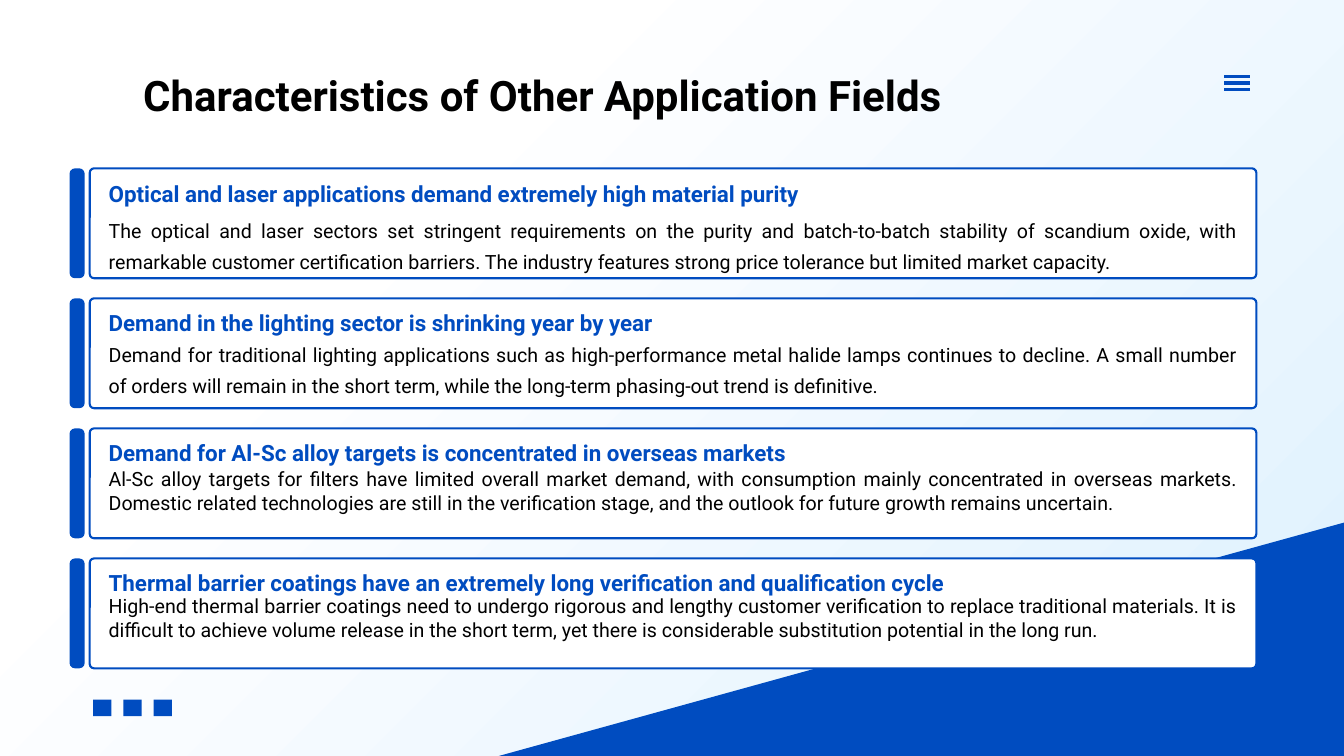
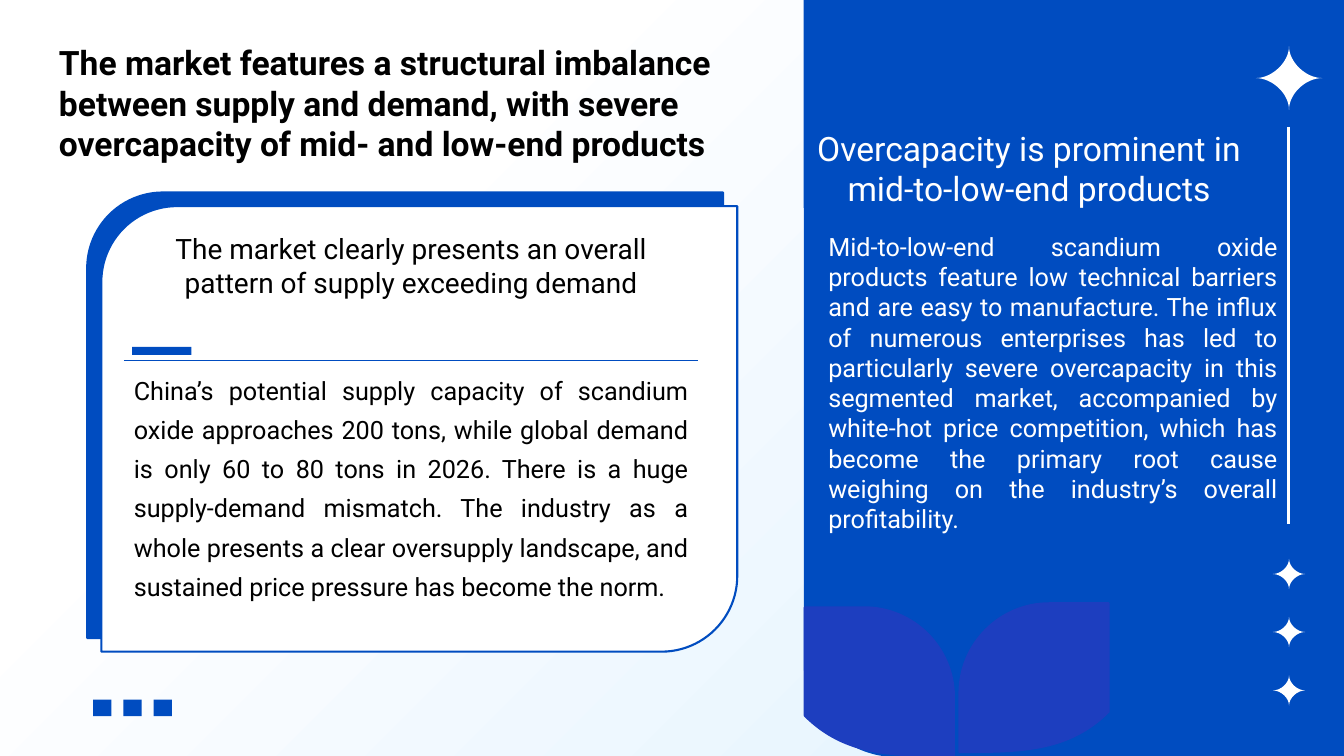
import lxml.etree
import pptx
import pptx.dml.color
import pptx.enum.shapes
import pptx.enum.text
import pptx.oxml.ns
import pptx.util

PX = 4572
BLUE, WHITE, BLACK, LEAF = "004CC0", "FFFFFF", "000000", "1D3EBF"
hue = pptx.dml.color.RGBColor.from_string
name = pptx.oxml.ns.qn
KIND = pptx.enum.shapes.MSO_SHAPE
ALIGN = pptx.enum.text.PP_ALIGN
ANCHOR = pptx.enum.text.MSO_ANCHOR


def put(page, kind, box, fill, line=None, bend=()):
    item = page.shapes.add_shape(kind, *[v * PX for v in box])
    item.shadow.inherit = False
    item.fill.solid()
    item.fill.fore_color.rgb = hue(fill)
    if line:
        item.line.color.rgb = hue(line)
        item.line.width = pptx.util.Pt(1.5)
    else:
        item.line.fill.background()
    for spot, value in enumerate(bend):
        item.adjustments[spot] = value
    return item


def write(item, box, words, size, color=BLACK, bold=False,
          align=ALIGN.LEFT, anchor=ANCHOR.TOP, space=1.0):
    item.left, item.top, item.width, item.height = [v * PX for v in box]
    frame = item.text_frame
    frame.word_wrap = True
    frame.auto_size = pptx.enum.text.MSO_AUTO_SIZE.SHAPE_TO_FIT_TEXT
    frame.vertical_anchor = anchor
    frame.text = words
    para = frame.paragraphs[0]
    para.alignment = align
    para.line_spacing = space
    para.font.name = "Roboto"
    para.font.size = pptx.util.Pt(size)
    para.font.bold = bold
    para.font.color.rgb = hue(color)


deck = pptx.Presentation()
deck.slide_width, deck.slide_height = 2667 * PX, 1500 * PX

back = deck.slide_master.background.fill
back.gradient()
back.gradient_angle = 315
for stop, place, color in zip(back.gradient_stops, (0.28, 1), (WHITE, "DDF0FE")):
    stop.position = place
    stop.color.rgb = hue(color)

heads = [
    ("Characteristics of Other Application Fields", (264, 128, 2220, 120), 30),
    ("The market features a structural imbalance between supply and demand, "
     "with severe overcapacity of mid- and low-end products", (97, 74, 1526, 262), 24),
]
pages = []
for words, box, size in heads:
    page = deck.slides.add_slide(deck.slide_layouts[5])
    write(page.shapes.title, box, words, size, bold=True)
    for step in range(3):
        put(page, KIND.RECTANGLE, (185 + 60 * step, 1388, 36, 33), BLUE)
    pages.append(page)
first, second = pages

slope = put(first, KIND.RIGHT_TRIANGLE, (990, 1037, 1677, 463), BLUE)
slope._element.spPr.xfrm.set("flipH", "1")

cards = [
    ("Optical and laser applications demand extremely high material purity",
     "The optical and laser sectors set stringent requirements on the purity and "
     "batch-to-batch stability of scandium oxide, with remarkable customer certification "
     "barriers. The industry features strong price tolerance but limited market capacity.",
     347, 411, 1.3),
    ("Demand in the lighting sector is shrinking year by year",
     "Demand for traditional lighting applications such as high-performance metal halide "
     "lamps continues to decline. A small number of orders will remain in the short term, "
     "while the long-term phasing-out trend is definitive.",
     603, 657, 1.3),
    ("Demand for Al-Sc alloy targets is concentrated in overseas markets",
     "Al-Sc alloy targets for filters have limited overall market demand, with consumption "
     "mainly concentrated in overseas markets. Domestic related technologies are still in "
     "the verification stage, and the outlook for future growth remains uncertain.",
     861, 917, 1.0),
    ("Thermal barrier coatings have an extremely long verification and qualification cycle",
     "High-end thermal barrier coatings need to undergo rigorous and lengthy customer "
     "verification to replace traditional materials. It is difficult to achieve volume "
     "release in the short term, yet there is considerable substitution potential in the "
     "long run.",
     1118, 1169, 1.0),
]
for row, (head, body, high, low, space) in enumerate(cards):
    top = 334 + 258 * row
    put(first, KIND.ROUNDED_RECTANGLE, (138, top, 30, 218), BLUE, bend=[0.35])
    put(first, KIND.ROUNDED_RECTANGLE, (178, top, 2315, 218), WHITE, BLUE, [0.04])
    write(first.shapes.add_textbox(0, 0, 0, 0), (196, high, 2280, 74), head, 16,
          BLUE, True, ALIGN.JUSTIFY, ANCHOR.MIDDLE)
    write(first.shapes.add_textbox(0, 0, 0, 0), (196, low, 2280, 142), body, 14,
          align=ALIGN.JUSTIFY, space=space)

for left, top, fill in [(173, 382, BLUE), (201, 409, WHITE)]:
    put(second, KIND.ROUND_2_DIAG_RECTANGLE, (left, top, 1262, 884), fill, BLUE, [0.17, 0])
put(second, KIND.RECTANGLE, (262, 688, 118, 16), BLUE)
panel = put(second, KIND.ROUND_1_RECTANGLE, (1597, 0, 1070, 1500), BLUE, BLUE, [0.17])
panel.rotation = 180

leaf = [(1597, 1205), (1715, 1205), (1813, 1205), (1893, 1285), (1893, 1383),
        (1893, 1500), (1775, 1500), (1677, 1500), (1597, 1420), (1597, 1322)]
forms = [(leaf, (2, 6), LEAF),
         ([(3797 - x, y - 8) for x, y in leaf], (2, 6), LEAF)]
for mid, wide, high in [(155, 66, 63), (1139, 32, 30), (1254, 32, 30), (1370, 32, 30)]:
    star = [(2558 - wide, mid)]
    for x, y in [(0, -1), (1, 0), (0, 1), (-1, 0)]:
        old = star[-1]
        for part in (old, (2558 + x * wide, mid + y * high)):
            star.append(((part[0] + 2558) // 2, (part[1] + mid) // 2))
        star.append((2558 + x * wide, mid + y * high))
    forms.append((star, (1, 4, 7, 10), WHITE))
for dots, bends, color in forms:
    pen = second.shapes.build_freeform(*dots[0], scale=PX)
    pen.add_line_segments(dots[1:])
    form = pen.convert_to_shape()
    legs = list(form._element.iter(name("a:lnTo")))
    for spot in bends:
        trio = legs[spot - 1:spot + 2]
        curve = lxml.etree.Element(name("a:cubicBezTo"))
        trio[0].addprevious(curve)
        for leg in trio:
            curve.append(leg[0])
            leg.getparent().remove(leg)
    form.shadow.inherit = False
    form.fill.solid()
    form.fill.fore_color.rgb = hue(color)
    if color == LEAF:
        form.line.color.rgb = hue(color)
        form.line.width = pptx.util.Pt(1.5)
    else:
        form.line.fill.background()

rules = [(first, (2429, y, 2480, y), BLUE, 2.5) for y in (152, 165, 178)]
rules += [(second, (246, 715, 1386, 715), BLUE, 1),
          (second, (2557, 252, 2557, 1040), WHITE, 1.5)]
for page, ends, color, thick in rules:
    rule = page.shapes.add_connector(
        pptx.enum.shapes.MSO_CONNECTOR.STRAIGHT, *[v * PX for v in ends])
    rule.line.color.rgb = hue(color)
    rule.line.width = pptx.util.Pt(thick)
    lxml.etree.SubElement(rule._element.spPr, name("a:effectLst"))

notes = [
    ((246, 449, 1140, 154),
     "The market clearly presents an overall pattern of supply exceeding demand",
     20, BLACK, ALIGN.CENTER, ANCHOR.MIDDLE, 1.0),
    ((246, 716, 1140, 570),
     "China’s potential supply capacity of scandium oxide approaches 200 tons, while global "
     "demand is only 60 to 80 tons in 2026. There is a huge supply-demand mismatch. The "
     "industry as a whole presents a clear oversupply landscape, and sustained price "
     "pressure has become the norm.",
     18, BLACK, ALIGN.JUSTIFY, ANCHOR.TOP, 1.3),
    ((1559, 242, 966, 182),
     "Overcapacity is prominent in mid-to-low-end products",
     24, WHITE, ALIGN.CENTER, ANCHOR.MIDDLE, 1.0),
    ((1624, 449, 931, 626),
     "Mid-to-low-end scandium oxide products feature low technical barriers and are easy to "
     "manufacture. The influx of numerous enterprises has led to particularly severe "
     "overcapacity in this segmented market, accompanied by white-hot price competition, "
     "which has become the primary root cause weighing on the industry’s overall "
     "profitability.",
     18, WHITE, ALIGN.JUSTIFY, ANCHOR.TOP, 1.0),
]
for box, words, size, color, align, anchor, space in notes:
    write(second.shapes.add_textbox(0, 0, 0, 0), box, words, size, color, False,
          align, anchor, space)

deck.save("out.pptx")
